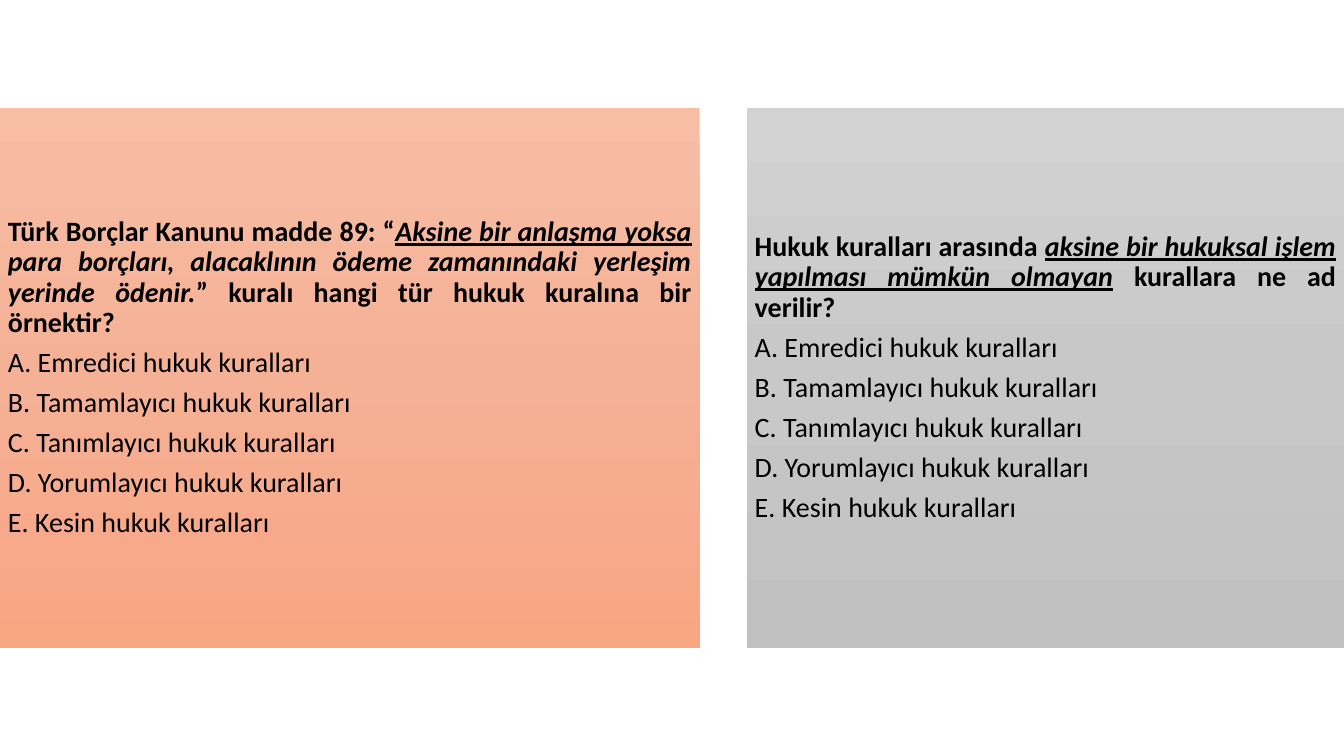
from copy import deepcopy

from pptx import Presentation, util as u
from pptx.dml.color import RGBColor
from pptx.enum import text
from pptx.oxml.ns import qn
from pptx.oxml.xmlchemy import OxmlElement

ANSWERS = [
    "A. Emredici hukuk kuralları",
    "B. Tamamlayıcı hukuk kuralları",
    "C. Tanımlayıcı hukuk kuralları",
    "D. Yorumlayıcı hukuk kuralları",
    "E. Kesin hukuk kuralları",
]
BOLD = {"bold": True}
ITALIC = {"bold": True, "italic": True}
STRESSED = {"bold": True, "italic": True, "underline": True}

# left and width in cm, gradient from top to bottom, question as (text, format) runs
PANELS = [
    (0, 17.63, ("F7BDA5", "F5B196", "F8A582"), [
        ("Türk Borçlar Kanunu madde 89: “", BOLD),
        ("Aksine bir anlaşma yoksa", STRESSED),
        (" para borçları, alacaklının ödeme zamanındaki yerleşim yerinde ödenir.", ITALIC),
        ("” kuralı hangi tür hukuk kuralına bir örnektir?", BOLD),
    ]),
    (18.82, 15.05, ("D2D2D2", "C8C8C8", "C0C0C0"), [
        ("Hukuk kuralları arasında ", BOLD),
        ("aksine bir hukuksal işlem yapılması mümkün olmayan", STRESSED),
        (" kurallara ne ad verilir?", BOLD),
    ]),
]
SLIDE_W, SLIDE_H = 33.87, 19.05
PANEL_H = 13.6
INSET = u.Cm(0.2)

FRAME = {
    "word_wrap": True,
    "auto_size": text.MSO_AUTO_SIZE.NONE,
    "vertical_anchor": text.MSO_ANCHOR.MIDDLE,
    "margin_left": INSET, "margin_right": INSET,
    "margin_top": INSET, "margin_bottom": INSET,
}
PARAGRAPH = {
    "alignment": text.PP_ALIGN.JUSTIFY,
    "line_spacing": 0.9,
    "space_before": u.Pt(0),
    "space_after": u.Pt(7),
}
FONT = {"name": "Calibri", "size": u.Pt(20)}


def rgb(value):
    return RGBColor.from_string(value)


def apply(target, values):
    for name, value in values.items():
        setattr(target, name, value)


def fill_gradient(sp, colours):
    """Fill from top to bottom with three evenly spaced colours."""
    sp.fill.gradient()
    sp.fill.gradient_angle = 270
    stops = sp._element.spPr.find(qn("a:gradFill")).find(qn("a:gsLst"))
    stops.insert(1, deepcopy(stops[0]))
    for i, (stop, colour) in enumerate(zip(sp.fill.gradient_stops, colours)):
        stop.position = i / 2
        stop.color.rgb = rgb(colour)


def write_paragraph(p, runs):
    pPr = p._p.get_or_add_pPr()
    pPr.set("marL", "0")
    pPr.set("indent", "0")
    pPr.append(OxmlElement("a:buNone"))
    apply(p, PARAGRAPH)
    for words, style in runs:
        r = p.add_run()
        r.text = words
        apply(r.font, {**FONT, **style})
        r.font.color.rgb = rgb("000000")


prs = Presentation()
prs.slide_width, prs.slide_height = u.Cm(SLIDE_W), u.Cm(SLIDE_H)
s = prs.slides.add_slide(prs.slide_layouts.get_by_name("Two Content"))
title, *bodies = s.placeholders
title._element.getparent().remove(title._element)

for sp, (left, width, colours, question) in zip(bodies, PANELS):
    apply(sp, {"left": u.Cm(left), "top": u.Cm((SLIDE_H - PANEL_H) / 2),
               "width": u.Cm(width), "height": u.Cm(PANEL_H)})
    fill_gradient(sp, colours)
    tf = sp.text_frame
    apply(tf, FRAME)
    write_paragraph(tf.paragraphs[0], question)
    for answer in ANSWERS:
        write_paragraph(tf.add_paragraph(), [(answer, {"bold": False})])

prs.save("out.pptx")
